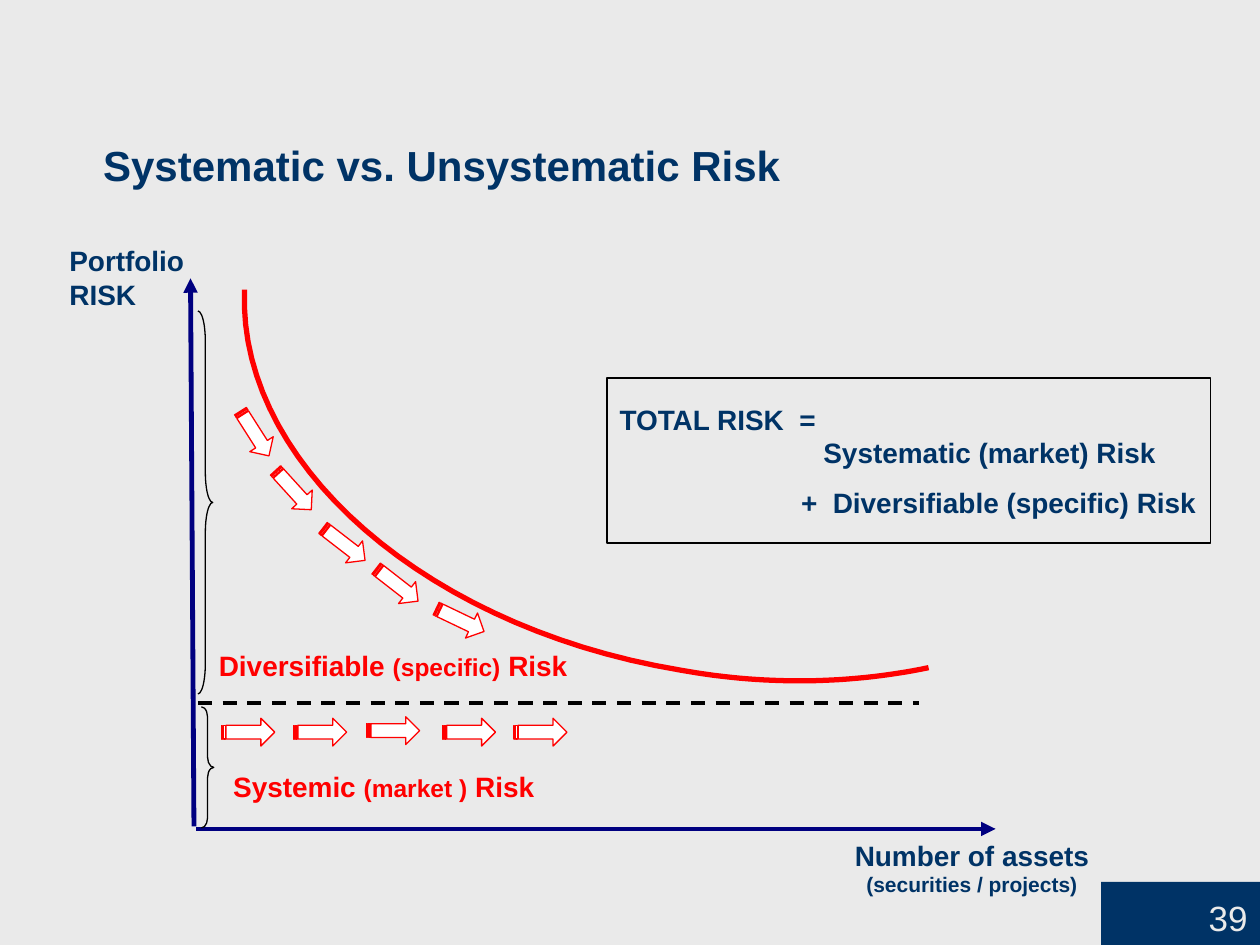
from lxml import etree
from pptx import Presentation
from pptx.dml.color import RGBColor
from pptx.enum.dml import MSO_LINE
from pptx.enum.shapes import MSO_CONNECTOR, MSO_SHAPE
from pptx.enum.text import MSO_ANCHOR, PP_ALIGN
from pptx.oxml.ns import qn
from pptx.util import Cm, Pt

RECT = MSO_SHAPE.RECTANGLE
BRACE = MSO_SHAPE.RIGHT_BRACE
ARROW = MSO_SHAPE.STRIPED_RIGHT_ARROW
STRAIGHT = MSO_CONNECTOR.STRAIGHT
DASH = MSO_LINE.DASH
LEFT, CENTER, RIGHT = PP_ALIGN.LEFT, PP_ALIGN.CENTER, PP_ALIGN.RIGHT
MIDDLE, BOTTOM = MSO_ANCHOR.MIDDLE, MSO_ANCHOR.BOTTOM

COLORS = {
    "back": "EAEAEA",
    "navy": "003366",
    "axis": "000080",
    "red": "FF0000",
    "black": "000000",
    "white": "FFFFFF",
}
FALLS = [(4.6, 8.46, 57.5), (5.38, 9.6, 47.7), (6.4, 10.69, 37.6),
         (7.47, 11.51, 37.9), (8.74, 12.22, 25.6)]
FLATS = [(4.47, 14.48, 0), (5.92, 14.48, 0), (7.39, 14.45, 0),
         (8.92, 14.48, 0), (10.36, 14.48, 0)]
CURVES = [
    [(18.72, 13.46), (17.15, 13.79), (15.42, 13.82), (13.72, 13.51)],
    [(13.72, 13.51), (8.61, 12.67), (4.78, 9.35), (4.93, 5.84)],
]


def color(name):
    return RGBColor.from_string(COLORS[name])


def set_line(shape, name, width):
    shape.line.color.rgb = color(name)
    shape.line.width = Pt(width)


def add_shape(slide, kind, box, fill=None, line=None):
    shape = slide.shapes.add_shape(kind, *map(Cm, box))
    shape.shadow.inherit = False
    if fill:
        shape.fill.solid()
        shape.fill.fore_color.rgb = color(fill)
    else:
        shape.fill.background()
    if line:
        set_line(shape, line, 0.75)
    else:
        shape.line.fill.background()
    return shape


def write(shape, rows, tint="navy", align=LEFT, anchor=MIDDLE, bold=True, side=0):
    frame = shape.text_frame
    frame.word_wrap = True
    frame.vertical_anchor = anchor
    frame.margin_left = frame.margin_right = Cm(side)
    frame.margin_top = frame.margin_bottom = Cm(0.13)
    for i, row in enumerate(rows):
        para = frame.add_paragraph() if i else frame.paragraphs[0]
        para.alignment = align
        for text, size in row:
            run = para.add_run()
            run.text = text
            font = run.font
            font.name, font.size, font.bold = "Arial", Pt(size), bold
            font.color.rgb = color(tint)
    return frame.paragraphs


def add_label(slide, box, rows, **style):
    write(slide.shapes.add_textbox(*map(Cm, box)), rows, **style)


def add_line(slide, start, end, name, width, dash=None, head=False):
    line = slide.shapes.add_connector(STRAIGHT, *map(Cm, start + end))
    set_line(line, name, width)
    if dash:
        line.line.dash_style = dash
    if head:
        etree.SubElement(line.line._get_or_add_ln(), qn("a:tailEnd"), type="triangle")
    etree.SubElement(line._element.spPr, qn("a:effectLst"))


def add_brace(slide, box, bend):
    brace = add_shape(slide, BRACE, box, line="black")
    brace.adjustments[0] = bend


def add_arrow(slide, left, top, turn):
    arrow = add_shape(slide, ARROW, (left, top, 1.07, 0.56), "white", "red")
    arrow.rotation = turn


def bend_at(knots, t):
    parts = ((1 - t) ** 3, 3 * t * (1 - t) ** 2, 3 * t * t * (1 - t), t ** 3)
    return tuple(Cm(sum(p * k[axis] for p, k in zip(parts, knots))) for axis in (0, 1))


def add_curve(slide, curves, steps=30):
    points = [bend_at(knots, i / steps) for knots in curves for i in range(steps + 1)]
    pen = slide.shapes.build_freeform(*points[0])
    pen.add_line_segments(points[1:], close=False)
    curve = pen.convert_to_shape()
    curve.shadow.inherit = False
    curve.fill.background()
    set_line(curve, "red", 3)


def add_sum(slide):
    box = add_shape(slide, RECT, (12.24, 7.62, 12.17, 3.33), line="black")
    rows = [[("TOTAL RISK  =", 16)], [("Systematic (market) Risk", 16)],
            [("+  Diversifiable (specific) Risk", 16)]]
    paras = write(box, rows, side=0.25)
    for para, inset in zip(paras, (0, 4.11, 3.66)):
        para._p.get_or_add_pPr().set("marL", str(Cm(inset)))
    paras[2].space_before = Pt(9)


def main():
    deck = Presentation()
    deck.slide_width, deck.slide_height = Cm(25.4), Cm(19.05)
    slide = deck.slides.add_slide(deck.slide_layouts[6])
    slide.background.fill.solid()
    slide.background.fill.fore_color.rgb = color("back")

    page = add_shape(slide, RECT, (22.2, 17.78, 3.2, 1.27), "navy")
    write(page, [[("39", 20)]], "back", RIGHT, BOTTOM, False, 0.25)
    add_label(slide, (1.83, 2.69, 22.68, 1.27),
              [[("Systematic vs. Unsystematic Risk", 24)]], anchor=BOTTOM, side=0.25)

    add_curve(slide, CURVES)
    add_line(slide, (3.91, 16.66), (3.84, 5.61), "axis", 2.75, head=True)
    add_line(slide, (3.96, 16.71), (20.07, 16.71), "axis", 2.75, head=True)
    add_line(slide, (3.99, 14.17), (18.52, 14.17), "black", 2, dash=DASH)
    add_brace(slide, (4.06, 14.25, 0.25, 2.44), 0.82)
    add_brace(slide, (3.99, 6.27, 0.3, 7.72), 2.03)
    for spot in FALLS + FLATS:
        add_arrow(slide, *spot)

    add_label(slide, (16.61, 16.87, 5.97, 1.24),
              [[("Number of assets", 16)], [("(securities / projects)", 12)]], align=CENTER)
    add_label(slide, (4.52, 15.49, 6.43, 0.71),
              [[("Systemic ", 16), ("(market )", 14), (" Risk", 16)]],
              tint="red", align=CENTER)
    add_label(slide, (4.2, 13.06, 7.45, 0.71),
              [[("Diversifiable ", 16), ("(specific)", 14), (" Risk", 16)]],
              tint="red", align=CENTER)
    add_label(slide, (1.4, 5.08, 3, 1.02), [[("Portfolio", 16)], [("RISK", 16)]])
    add_sum(slide)
    deck.save("out.pptx")


if __name__ == "__main__":
    main()
